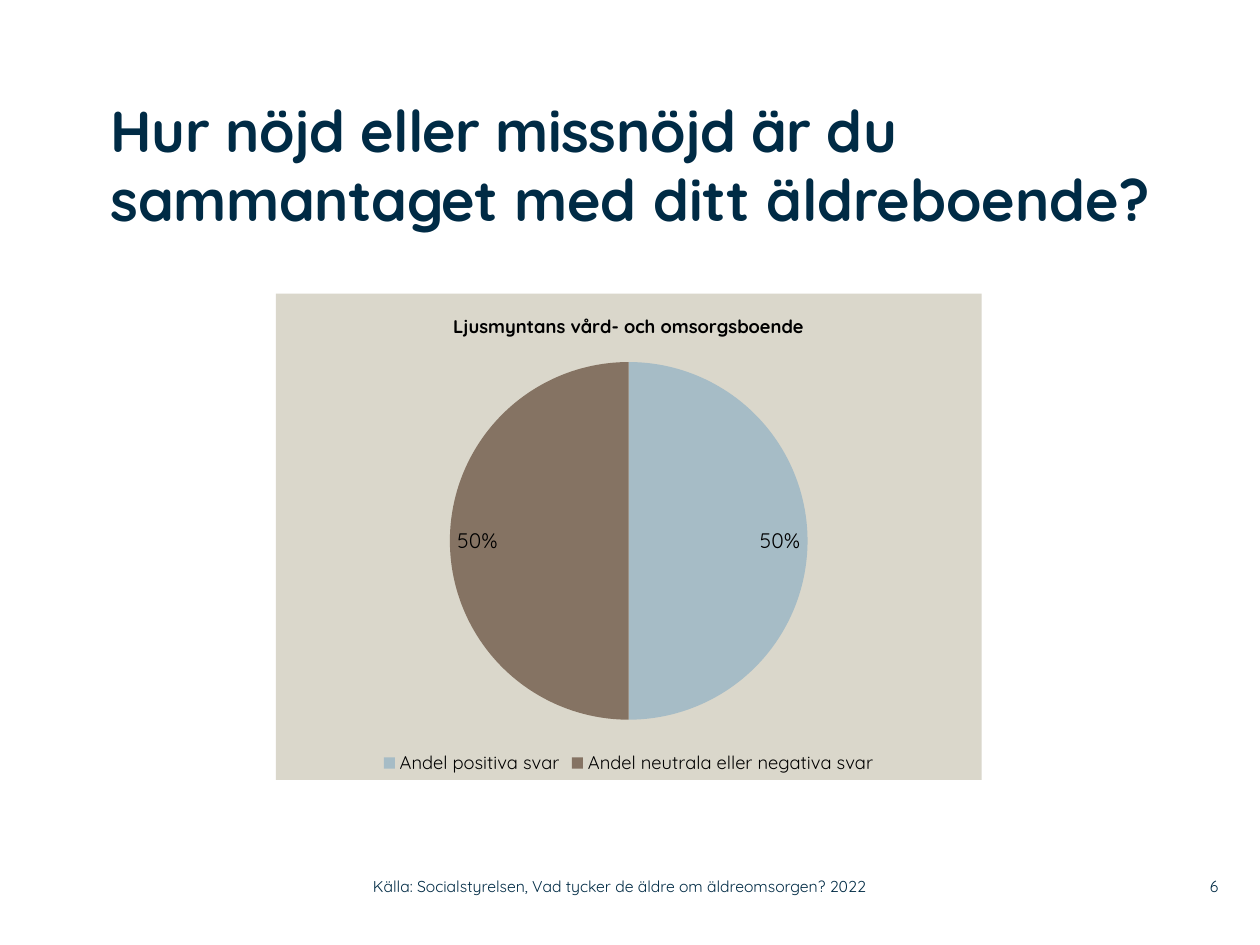
from pptx import Presentation
from pptx.chart.data import CategoryChartData
from pptx.dml.color import RGBColor
from pptx.enum.chart import XL_CHART_TYPE, XL_LABEL_POSITION, XL_LEGEND_POSITION
from pptx.enum.text import MSO_ANCHOR, PP_ALIGN
from pptx.oxml import parse_xml
from pptx.oxml.ns import nsdecls
from pptx.util import Inches, Pt

PIE = XL_CHART_TYPE.PIE
INSIDE_END = XL_LABEL_POSITION.INSIDE_END
BOTTOM = XL_LEGEND_POSITION.BOTTOM
TOP, MIDDLE = MSO_ANCHOR.TOP, MSO_ANCHOR.MIDDLE
LEFT, RIGHT = PP_ALIGN.LEFT, PP_ALIGN.RIGHT

FONT = "Quicksand"
NAVY, BLACK, BEIGE = "002B45", "000000", "DAD7CB"
SLICE_COLORS = ["A6BCC6", "857363"]


def color(hex_value):
    return RGBColor.from_string(hex_value)


def format_font(font, size, hex_value, bold=False):
    font.name = FONT
    font.size = Pt(size)
    font.bold = bold
    font.color.rgb = color(hex_value)


def add_text(paragraph, text, size=9, hex_value=NAVY, bold=False, spacing=0):
    run = paragraph.add_run()
    run.text = text
    format_font(run.font, size, hex_value, bold)
    if spacing:
        run.font._element.set("spc", str(round(spacing * 100)))


class SlideBuilder:
    def __init__(self, slide):
        self.slide = slide
        background = slide.background.fill
        background.solid()
        background.fore_color.rgb = color("FFFFFF")

    def text_box(self, runs, bounds, anchor=MIDDLE, alignment=LEFT, line_spacing=1.0):
        shape = self.slide.shapes.add_textbox(*map(Inches, bounds))
        frame = shape.text_frame
        frame.word_wrap = True
        frame.vertical_anchor = anchor
        frame.margin_left = frame.margin_right = 0
        frame.margin_top = frame.margin_bottom = 0
        paragraph = frame.paragraphs[0]
        paragraph.alignment = alignment
        paragraph.line_spacing = line_spacing
        for text, style in runs:
            add_text(paragraph, text, **style)

    def pie_chart(self, title, shares, bounds):
        data = CategoryChartData()
        data.categories = list(shares)
        data.add_series("Series 1", list(shares.values()))
        chart = self.slide.shapes.add_chart(PIE, *map(Inches, bounds), data).chart
        format_font(chart.font, 18, BLACK)
        chart._chartSpace.chart.addnext(parse_xml(
            f'<c:spPr {nsdecls("c", "a")}><a:solidFill><a:srgbClr val="{BEIGE}"/>'
            "</a:solidFill><a:ln><a:noFill/></a:ln></c:spPr>"))

        chart.has_title = True
        chart.chart_title.include_in_layout = False
        add_text(chart.chart_title.text_frame.paragraphs[0], title,
                 size=10.5, hex_value=BLACK, bold=True)

        chart.has_legend = True
        chart.legend.position = BOTTOM
        chart.legend.include_in_layout = False
        format_font(chart.legend.font, 10.5, BLACK)

        plot = chart.plots[0]
        plot.vary_by_categories = True
        for index, hex_value in enumerate(SLICE_COLORS):
            point = plot.series[0].points[index]
            point.format.fill.solid()
            point.format.fill.fore_color.rgb = color(hex_value)
            point.format.line.fill.background()

        labels = plot.series[0].data_labels
        labels.show_percentage = True
        labels.show_value = False
        labels.number_format = "0%"
        labels.number_format_is_linked = False
        labels.position = INSIDE_END
        format_font(labels.font, 12, BLACK)


def main():
    presentation = Presentation()
    presentation.slide_width = Inches(10)
    presentation.slide_height = Inches(7.5)
    builder = SlideBuilder(presentation.slides.add_slide(presentation.slide_layouts[6]))

    heading = {"size": 33, "bold": True}
    builder.text_box(
        [("Hur nöjd eller missnöjd är du sammantaget ", {**heading, "spacing": -0.3}),
         ("med ditt äldreboende?", heading)],
        (0.88, 0.75, 8.83, 1.42), anchor=TOP)
    builder.pie_chart(
        "Ljusmyntans vård- och omsorgsboende",
        {"Andel positiva svar": 50, "Andel neutrala eller negativa svar": 50},
        (2.19, 2.33, 5.6, 3.86))
    builder.text_box(
        [("Källa: Socialstyrelsen, Vad tycker de äldre om äldreomsorgen? 2022", {})],
        (2.96, 6.89, 4.43, 0.29))
    builder.text_box([("6", {})], (9.2, 6.89, 0.47, 0.29), alignment=RIGHT)

    presentation.save("out.pptx")


if __name__ == "__main__":
    main()
